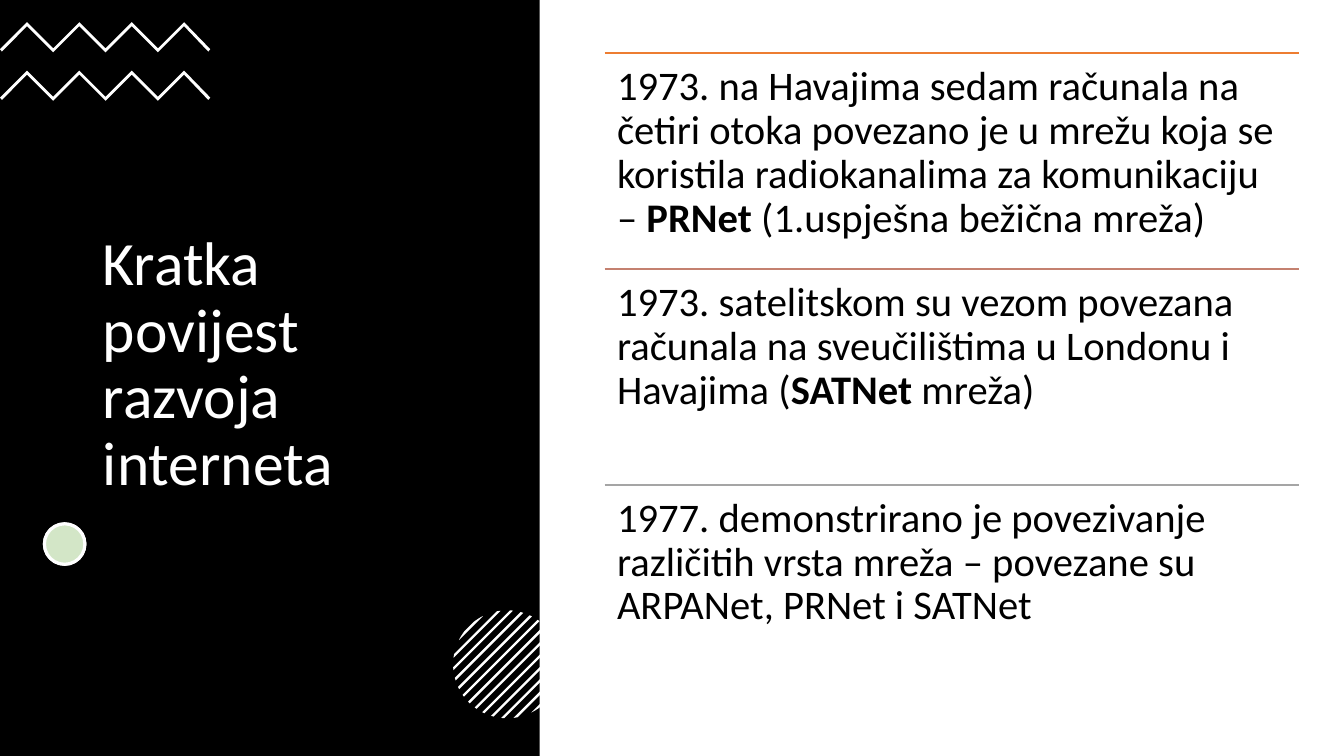
import math
from dataclasses import dataclass

from lxml import etree
from pptx import Presentation
from pptx import util as u
from pptx.dml.color import RGBColor
from pptx.enum import shapes, text
from pptx.oxml.ns import qn


@dataclass(frozen=True)
class Theme:
    font: str = "Calibri"
    title_size: int = 44
    body_size: int = 29
    black: str = "000000"
    white: str = "FFFFFF"
    green: str = "70AD47"
    rules: tuple = ("ED7D31", "C48170", "A5A5A5")
    line_spacing: float = 0.9


class SlideBuilder:
    """Draws styled elements on one slide; lengths are in centimetres."""

    def __init__(self, slide, theme):
        self.slide = slide
        self.theme = theme

    def _style(self, paragraph, size, color):
        paragraph.alignment = text.PP_ALIGN.LEFT
        paragraph.line_spacing = self.theme.line_spacing
        for run in paragraph.runs:
            run.font.name = self.theme.font
            run.font.size = u.Pt(size)
            run.font.color.rgb = RGBColor.from_string(color)

    def _fill(self, shape, color):
        shape.shadow.inherit = False
        shape.fill.solid()
        shape.fill.fore_color.rgb = RGBColor.from_string(color)
        shape.line.fill.background()

    def title(self, wording, left, top, width, height):
        title = self.slide.shapes.title
        title.left, title.top = u.Cm(left), u.Cm(top)
        title.width, title.height = u.Cm(width), u.Cm(height)
        frame = title.text_frame
        frame.text = wording
        frame.word_wrap = True
        frame.auto_size = text.MSO_AUTO_SIZE.NONE
        frame.vertical_anchor = text.MSO_ANCHOR.MIDDLE
        self._style(frame.paragraphs[0], self.theme.title_size, self.theme.white)

    def panel(self, left, top, width, height, color):
        """Add a plain rectangle behind the title."""
        panel = self.slide.shapes.add_shape(
            shapes.MSO_SHAPE.RECTANGLE, *map(u.Cm, (left, top, width, height)))
        self._fill(panel, color)
        self.slide.shapes.title.element.addprevious(panel.element)

    def dot(self, left, top, diameter, color, opacity=100):
        dot = self.slide.shapes.add_shape(
            shapes.MSO_SHAPE.OVAL, *map(u.Cm, (left, top, diameter, diameter)))
        self._fill(dot, color)
        dot.line.color.rgb = RGBColor.from_string(self.theme.white)
        dot.line.width = u.Pt(2.25)
        if opacity < 100:
            tint = dot.element.spPr.find(qn("a:solidFill"))[0]
            etree.SubElement(tint, qn("a:alpha"), val=str(opacity * 1000))

    def outlines(self, polygons, color):
        """Add closed polygons as one group."""
        group = self.slide.shapes.add_group_shape()
        for polygon in polygons:
            start, *others = [(u.Cm(x), u.Cm(y)) for x, y in polygon]
            builder = group.shapes.build_freeform(*start)
            builder.add_line_segments(others, close=True)
            self._fill(builder.convert_to_shape(), color)

    def rule(self, left, top, width, color):
        rule = self.slide.shapes.add_connector(
            shapes.MSO_CONNECTOR.STRAIGHT,
            *map(u.Cm, (left, top, left + width, top)))
        rule.line.color.rgb = RGBColor.from_string(color)
        rule.line.width = u.Pt(1)
        etree.SubElement(rule.element.spPr, qn("a:effectLst"))

    def passage(self, parts, left, top, width, height):
        """Add a text box; every second part is bold."""
        box = self.slide.shapes.add_textbox(
            *map(u.Cm, (left, top, width, height)))
        frame = box.text_frame
        frame.word_wrap = True
        frame.margin_left = frame.margin_right = u.Cm(0.31)
        frame.margin_top = frame.margin_bottom = u.Cm(0.31)
        paragraph = frame.paragraphs[0]
        for number, part in enumerate(parts):
            run = paragraph.add_run()
            run.text = part
            run.font.bold = number % 2 == 1
        self._style(paragraph, self.theme.body_size, self.theme.black)


def zigzag(top, step=0.66, thickness=0.1, teeth=4):
    last = 2 * teeth
    xs = [0.02 + step * i for i in range(last + 1)]
    ys = [top + step * (1 - i % 2) for i in range(last + 1)]
    inner = list(zip(xs, ys))[1:-1]
    end_y = top + step + 0.02
    upper = [(0, end_y), *inner, (xs[-1], end_y)]
    lower = [(x, y + thickness) for x, y in inner]
    tip_y = end_y + 0.06
    return [*upper, (xs[-1] - 0.05, tip_y), *reversed(lower), (0.05, tip_y)]


def disc_stripe(center_x, center_y, radius, offset, thickness, steps=6):
    """Outline a diagonal stripe cut off by a circle, offset from its centre."""
    near, far = [], []
    for i in range(steps + 1):
        distance = offset + thickness * (i / steps - 0.5)
        distance = max(-radius, min(radius, distance))
        half = math.sqrt(radius ** 2 - distance ** 2)
        for side, sign in ((near, 1), (far, -1)):
            side.append((center_x + (distance + sign * half) / math.sqrt(2),
                         center_y + (distance - sign * half) / math.sqrt(2)))
    return near + far[::-1]


EVENTS = [
    ("1973. na Havajima sedam računala na četiri otoka povezano je u mrežu "
     "koja se koristila radiokanalima za komunikaciju – ",
     "PRNet", " (1.uspješna bežična mreža)"),
    ("1973. satelitskom su vezom povezana računala na sveučilištima u "
     "Londonu i Havajima (", "SATNet ", "mreža)"),
    ("1977. demonstrirano je povezivanje različitih vrsta mreža – povezane "
     "su ARPANet, PRNet i SATNet",),
]


def main():
    theme = Theme()
    deck = Presentation()
    deck.slide_width, deck.slide_height = u.Cm(33.87), u.Cm(19.05)
    page = SlideBuilder(deck.slides.add_slide(deck.slide_layouts[5]), theme)

    page.panel(0, 0, 13.6, 19.05, theme.black)
    page.title("Kratka povijest razvoja interneta", 2.34, 3.33, 8.89, 11.76)
    page.outlines([zigzag(top) for top in (0.56, 1.78)], theme.white)

    for color, opacity in ((theme.white, 100), (theme.green, 30)):
        page.dot(1.12, 13.2, 1.02, color, opacity)

    stripes = [disc_stripe(12.78, 16.74, 1.36, 0.22 * k, 0.06)
               for k in range(-6, 7)]
    page.outlines(stripes, theme.white)

    left, first_top, width, height = 15.24, 1.34, 17.5, 5.44
    for row, (parts, color) in enumerate(zip(EVENTS, theme.rules)):
        top = first_top + row * height
        page.rule(left, top, width, color)
        page.passage(parts, left, top, width, height)

    deck.save("out.pptx")


if __name__ == "__main__":
    main()
